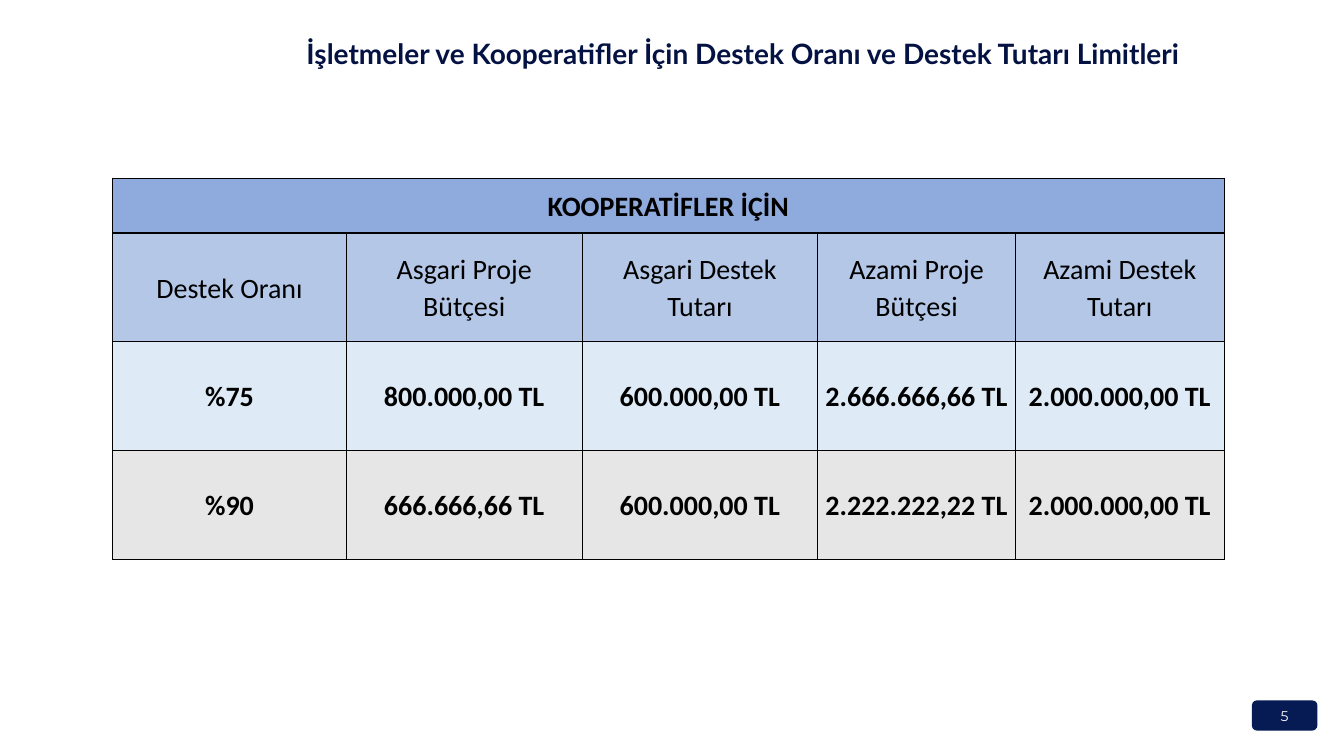
from lxml.etree import SubElement
from pptx import Presentation
from pptx.dml.color import RGBColor
from pptx.enum.shapes import MSO_SHAPE
from pptx.enum.text import MSO_ANCHOR, MSO_AUTO_SIZE, PP_ALIGN
from pptx.oxml.ns import qn
from pptx.util import Cm, Pt

HEADING = "KOOPERATİFLER İÇİN"
ROWS = [
    [HEADING, "", "", "", ""],
    ["Destek Oranı", "Asgari Proje Bütçesi", "Asgari Destek Tutarı",
     "Azami Proje Bütçesi", "Azami Destek Tutarı"],
    ["%75", "800.000,00 TL", "600.000,00 TL", "2.666.666,66 TL", "2.000.000,00 TL"],
    ["%90", "666.666,66 TL", "600.000,00 TL", "2.222.222,22 TL", "2.000.000,00 TL"],
]
ROW_FILLS = ["8FAADC", "B4C7E7", "DEEBF7", "E7E6E6"]
ROW_BOLD = [True, False, True, True]
ROW_HEIGHTS = [1.37, 2.74, 2.74, 2.74]
COL_WIDTHS = [5.89, 5.94, 5.94, 4.98, 5.26]


def paint(fill, color):
    """Give a fill a solid hex colour."""
    fill.solid()
    fill.fore_color.rgb = RGBColor.from_string(color)


def write(tf, text, font="Calibri", size=20, color="000000", bold=False,
          align=PP_ALIGN.CENTER, anchor=MSO_ANCHOR.MIDDLE, spacing=1.0):
    """Write one formatted paragraph into a text frame."""
    tf.vertical_anchor = anchor
    p = tf.paragraphs[0]
    p.alignment = align
    p.line_spacing = spacing
    r = p.add_run()
    r.text = text
    r.font.name = font
    r.font.size = Pt(size)
    r.font.bold = bold
    r.font.color.rgb = RGBColor.from_string(color)


def add_borders(cell, color="000000", width=1):
    """Draw a solid line on all four sides of a table cell."""
    tcPr = cell._tc.get_or_add_tcPr()
    for side in ("a:lnL", "a:lnR", "a:lnT", "a:lnB"):
        ln = SubElement(tcPr, qn(side), w=str(Pt(width)))
        SubElement(SubElement(ln, qn("a:solidFill")), qn("a:srgbClr"), val=color)


def set_title(slide, text):
    """Place and format the title placeholder."""
    sp = slide.shapes.title
    sp.left, sp.top, sp.width, sp.height = Cm(7.47), Cm(0.79), Cm(25.9), Cm(1.12)
    tf = sp.text_frame
    tf.word_wrap = True
    tf.auto_size = MSO_AUTO_SIZE.NONE
    write(tf, text, font="Lato", color="041243", bold=True,
          align=PP_ALIGN.LEFT, anchor=MSO_ANCHOR.TOP)


def add_limits_table(slide):
    """Add the table of support rates and limits."""
    table = slide.shapes.add_table(
        len(ROWS), len(COL_WIDTHS), Cm(2.84), Cm(4.5),
        Cm(sum(COL_WIDTHS)), Cm(sum(ROW_HEIGHTS))).table
    for column, width in zip(table.columns, COL_WIDTHS):
        column.width = Cm(width)
    for i, texts in enumerate(ROWS):
        table.rows[i].height = Cm(ROW_HEIGHTS[i])
        for j, text in enumerate(texts):
            cell = table.cell(i, j)
            add_borders(cell)
            paint(cell.fill, ROW_FILLS[i])
            cell.vertical_anchor = MSO_ANCHOR.MIDDLE
            cell.margin_left = cell.margin_right = Cm(0.18)
            cell.margin_top = cell.margin_bottom = 0
            if text:
                write(cell.text_frame, text, bold=ROW_BOLD[i], anchor=None, spacing=1.07)
    table.cell(0, 0).merge(table.cell(0, len(COL_WIDTHS) - 1))


def add_page_number(slide, number):
    """Add the page number on a rounded badge."""
    sp = slide.shapes.add_shape(MSO_SHAPE.ROUNDED_RECTANGLE,
                                Cm(31.55), Cm(17.65), Cm(1.65), Cm(0.76))
    sp.shadow.inherit = False
    paint(sp.fill, "061A53")
    sp.line.fill.background()
    write(sp.text_frame, number, font="Montserrat", size=10, color="FFFFFF")


def main():
    """Build the slide and save it."""
    prs = Presentation()
    prs.slide_width, prs.slide_height = Cm(33.87), Cm(19.05)
    slide = prs.slides.add_slide(prs.slide_layouts[5])
    add_page_number(slide, "5")
    set_title(slide, "İşletmeler ve Kooperatifler İçin Destek Oranı ve Destek Tutarı Limitleri")
    add_limits_table(slide)
    prs.save("out.pptx")


if __name__ == "__main__":
    main()
